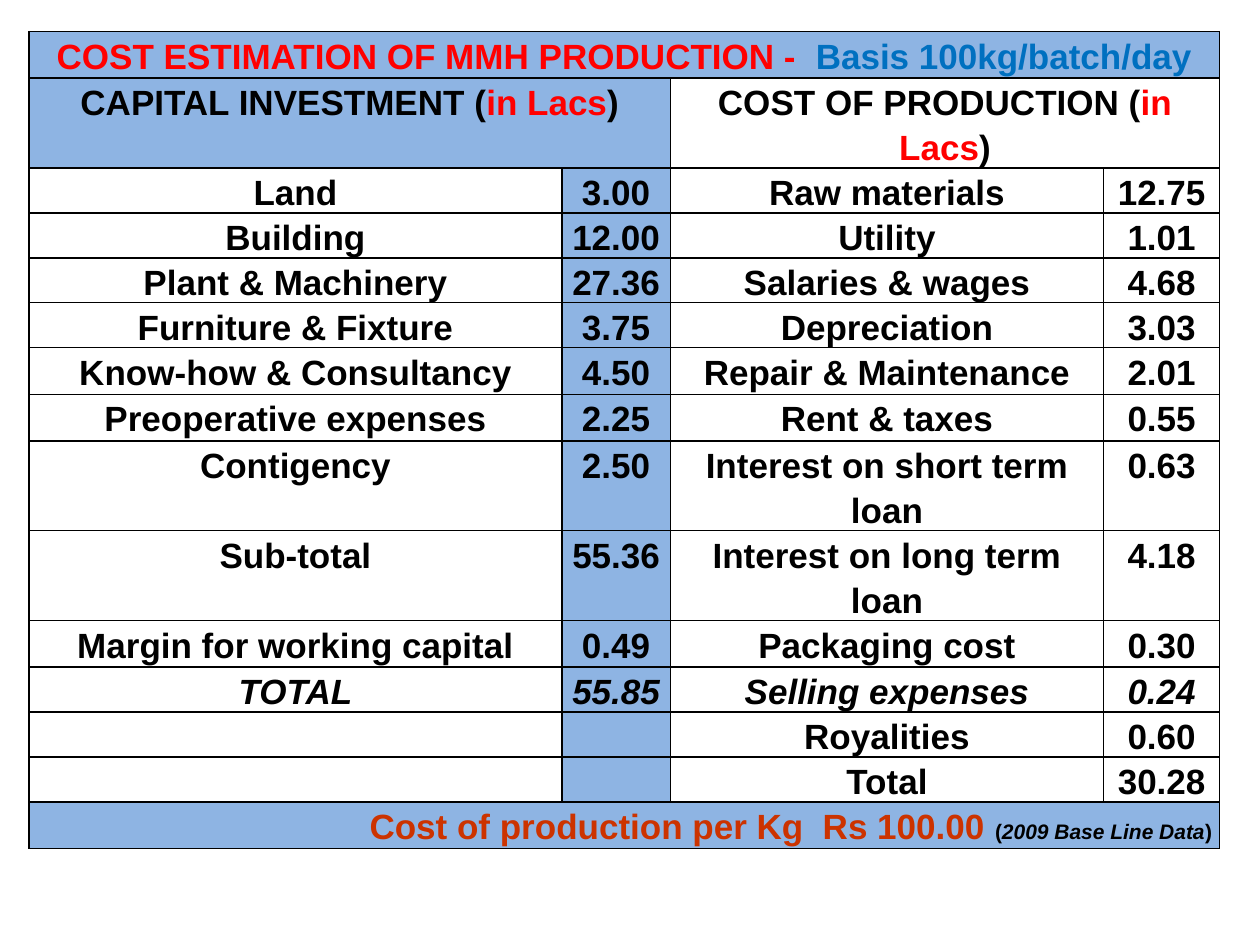
from typing import NamedTuple

from lxml.etree import SubElement
from pptx import Presentation
from pptx.dml.color import RGBColor
from pptx.enum.text import PP_ALIGN
from pptx.oxml.ns import qn
from pptx.util import Inches, Pt

BLACK = RGBColor(0x00, 0x00, 0x00)
RED = RGBColor(0xFF, 0x00, 0x00)
BLUE = RGBColor(0x00, 0x70, 0xC0)
RUST = RGBColor(0xCC, 0x33, 0x00)
SKY = RGBColor(0x8E, 0xB4, 0xE3)


class Part(NamedTuple):
    text: str
    color: RGBColor = BLACK
    size: int = 20
    slant: bool = False


class Line(NamedTuple):
    asset: str
    worth: str
    item: str
    cost: str
    slant: bool = False


COLS = [4.23, 0.86, 3.44, 0.92]
ROWS = [0.37] + [0.29] * 5 + [0.37] * 5 + [0.29, 0.22, 0.29, 0.37]

LINES = [
    Line("Land", "3.00", "Raw materials", "12.75"),
    Line("Building", "12.00", "Utility", "1.01"),
    Line("Plant & Machinery", "27.36", "Salaries & wages", "4.68"),
    Line("Furniture & Fixture", "3.75", "Depreciation", "3.03"),
    Line("Know-how & Consultancy", "4.50", "Repair & Maintenance", "2.01"),
    Line("Preoperative expenses", "2.25", "Rent & taxes", "0.55"),
    Line("Contigency", "2.50", "Interest on short term loan", "0.63"),
    Line("Sub-total", "55.36", "Interest on long term loan", "4.18"),
    Line("Margin for working capital", "0.49", "Packaging cost", "0.30"),
    Line("TOTAL", "55.85", "Selling expenses", "0.24", slant=True),
    Line("", "", "Royalities", "0.60"),
    Line("", "", "Total", "30.28"),
]


def style(cell, shade: bool) -> None:
    """Set the margins, thin black borders and fill of a cell."""
    cell.margin_left = cell.margin_right = Inches(0.06)
    cell.margin_top = cell.margin_bottom = 0
    props = cell._tc.get_or_add_tcPr()
    for side in ("a:lnL", "a:lnR", "a:lnT", "a:lnB"):
        edge = SubElement(props, qn(side), w=str(Pt(1)))
        fill = SubElement(edge, qn("a:solidFill"))
        SubElement(fill, qn("a:srgbClr"), val=str(BLACK))
    if shade:
        cell.fill.solid()
        cell.fill.fore_color.rgb = SKY
    else:
        cell.fill.background()


def write(cell, parts: list[Part], align: PP_ALIGN = PP_ALIGN.CENTER) -> None:
    """Write bold runs into a cell."""
    para = cell.text_frame.paragraphs[0]
    para.alignment = align
    para.line_spacing = 1.15
    for part in parts:
        run = para.add_run()
        run.text = part.text
        font = run.font
        font.name = "Arial"
        font.size = Pt(part.size)
        font.bold = True
        font.italic = part.slant
        font.color.rgb = part.color


def head(title: str) -> list[Part]:
    return [Part(title + " ("), Part("in Lacs", RED), Part(")")]


def main() -> None:
    deck = Presentation()
    deck.slide_width, deck.slide_height = Inches(10), Inches(7.5)
    slide = deck.slides.add_slide(deck.slide_layouts[6])

    # Table grid
    frame = slide.shapes.add_table(
        len(ROWS), len(COLS), Inches(0.23), Inches(0.25),
        Inches(sum(COLS)), Inches(sum(ROWS)))
    table = frame.table
    table.first_row = table.horz_banding = False
    for col, width in zip(table.columns, COLS):
        col.width = Inches(width)
    for row, height in zip(table.rows, ROWS):
        row.height = Inches(height)

    # Shading: title, footer, capital heading and its value column
    last = len(ROWS) - 1
    for r in range(len(ROWS)):
        for c in range(len(COLS)):
            style(table.cell(r, c),
                  r in (0, last) or c == 1 or (r, c) == (1, 0))

    # Title and headings
    for r, left, right in ((0, 0, 3), (1, 0, 1), (1, 2, 3), (last, 0, 3)):
        table.cell(r, left).merge(table.cell(r, right))
    write(table.cell(0, 0), [
        Part("COST ESTIMATION OF MMH PRODUCTION -  ", RED),
        Part("Basis 100kg/batch/day", BLUE)])
    write(table.cell(1, 0), head("CAPITAL INVESTMENT"))
    write(table.cell(1, 2), head("COST OF PRODUCTION"))

    # Cost lines
    for r, line in enumerate(LINES, 2):
        for c, text in enumerate(line[:4]):
            if text:
                write(table.cell(r, c), [Part(text, slant=line.slant)])

    # Footer
    write(table.cell(last, 0), [
        Part("Cost of production per Kg  Rs 100.00 ", RUST),
        Part("(", size=12),
        Part("2009 Base Line Data", size=12, slant=True),
        Part(")", size=12)], PP_ALIGN.RIGHT)

    deck.save("out.pptx")


if __name__ == "__main__":
    main()
